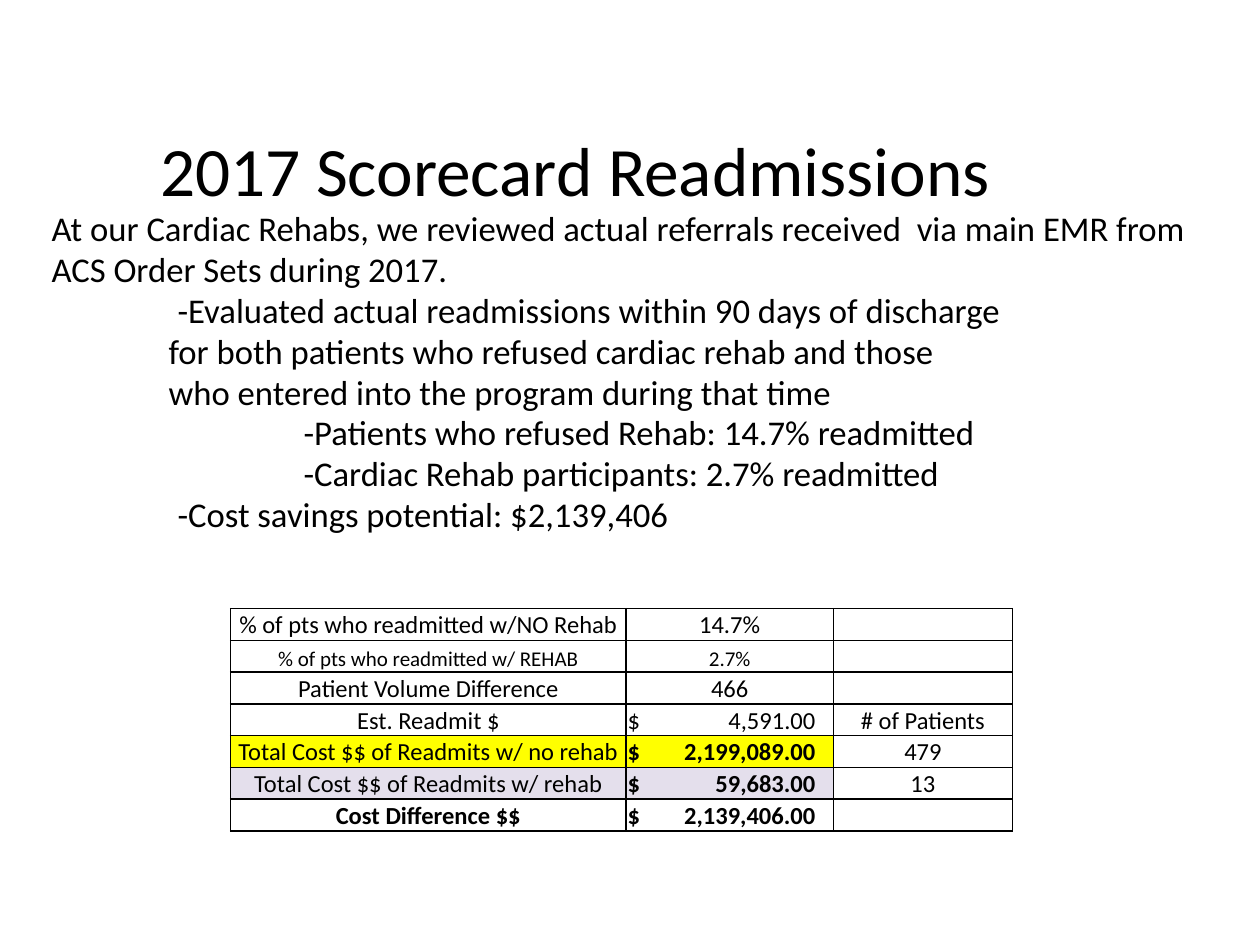
from lxml.etree import SubElement
from pptx import Presentation
from pptx.dml.color import RGBColor
from pptx.enum.text import MSO_ANCHOR, PP_ALIGN
from pptx.oxml.ns import qn
from pptx.util import Cm, Pt

FONT = "Calibri"
COLORS = {"ink": "000000", "no_rehab": "FFFF00", "rehab": "E4DFEC"}

TITLE = "2017 Scorecard Readmissions"
# (text, left indent in cm)
BODY = [
    ("At our Cardiac Rehabs, we reviewed actual referrals received  via main EMR "
     "from ACS Order Sets during 2017.", 0),
    ("-Evaluated actual readmissions within 90 days of discharge", 2.54),
    ("for both patients who refused cardiac rehab and those", 2.36),
    ("who entered into the program during that time", 2.36),
    ("-Patients who refused Rehab: 14.7% readmitted", 5.08),
    ("-Cardiac Rehab participants: 2.7% readmitted", 5.08),
    ("-Cost savings potential: $2,139,406", 2.54),
]

# (cells, text size, fill name, bold columns)
ROWS = [
    (("% of pts who readmitted w/NO Rehab", "14.7%", ""), 14, None, ()),
    (("% of pts who readmitted w/ REHAB", "2.7%", ""), 12, None, ()),
    (("Patient Volume Difference", "466", ""), 14, None, ()),
    (("Est. Readmit $", "$\t4,591.00", "# of Patients"), 14, None, ()),
    (("Total Cost $$ of Readmits w/ no rehab", "$\t2,199,089.00", "479"),
     14, "no_rehab", (1,)),
    (("Total Cost $$ of Readmits w/ rehab", "$\t59,683.00", "13"),
     14, "rehab", (1,)),
    (("Cost Difference $$", "$\t2,139,406.00", ""), 14, None, (0, 1)),
]
COLUMN_WIDTHS = [7.97, 4.18, 3.61]
ROW_HEIGHT = 0.64
AMOUNT_TAB = 3.79


def color(name):
    return RGBColor.from_string(COLORS[name])


def format_runs(paragraph, size, bold=False):
    for span in paragraph.runs:
        span.font.name = FONT
        span.font.size = Pt(size)
        span.font.bold = bold
        span.font.color.rgb = color("ink")


def add_text(slide, left, top, width, height, lines, size, spacing):
    box = slide.shapes.add_textbox(Cm(left), Cm(top), Cm(width), Cm(height))
    frame = box.text_frame
    frame.word_wrap = True
    frame.margin_top = frame.margin_bottom = 0
    for index, (text, indent) in enumerate(lines):
        para = frame.paragraphs[0] if index == 0 else frame.add_paragraph()
        para.text = text
        para.line_spacing = spacing
        para._p.get_or_add_pPr().set("marL", str(Cm(indent)))
        format_runs(para, size)


def add_borders(cell):
    properties = cell._tc.get_or_add_tcPr()
    for side in ("a:lnL", "a:lnR", "a:lnT", "a:lnB"):
        line = SubElement(properties, qn(side), w=str(Pt(1)))
        fill = SubElement(line, qn("a:solidFill"))
        SubElement(fill, qn("a:srgbClr"), val=COLORS["ink"])


def fill_cell(cell, text, size, bold, fill_name):
    cell.margin_left = cell.margin_right = cell.margin_top = Cm(0.03)
    cell.margin_bottom = 0
    cell.vertical_anchor = MSO_ANCHOR.BOTTOM
    add_borders(cell)
    if fill_name:
        cell.fill.solid()
        cell.fill.fore_color.rgb = color(fill_name)
    else:
        cell.fill.background()

    para = cell.text_frame.paragraphs[0]
    if "\t" in text:
        tabs = SubElement(para._p.get_or_add_pPr(), qn("a:tabLst"))
        SubElement(tabs, qn("a:tab"), pos=str(Cm(AMOUNT_TAB)), algn="r")
    else:
        para.alignment = PP_ALIGN.CENTER
    if text:
        para.text = text
        format_runs(para, size, bold)
    else:  # keeps an empty cell from stretching its row
        SubElement(para._p, qn("a:endParaRPr"), sz=str(size * 100))


def add_cost_table(slide):
    frame = slide.shapes.add_table(
        len(ROWS), len(COLUMN_WIDTHS), Cm(4.65), Cm(12.27),
        Cm(sum(COLUMN_WIDTHS)), Cm(ROW_HEIGHT * len(ROWS)))
    table = frame.table
    table.first_row = table.horz_banding = False
    for column, width in zip(table.columns, COLUMN_WIDTHS):
        column.width = Cm(width)
    for r, (texts, size, fill_name, bold_columns) in enumerate(ROWS):
        table.rows[r].height = Cm(ROW_HEIGHT)
        for c, text in enumerate(texts):
            fill_cell(table.cell(r, c), text, size, c in bold_columns,
                      fill_name if c < 2 else None)


def main():
    deck = Presentation()
    deck.slide_width, deck.slide_height = Cm(25.4), Cm(19.05)
    slide = deck.slides.add_slide(deck.slide_layouts[6])
    add_text(slide, 2.98, 2.56, 20, 1.7, [(TITLE, 0)], 39.6, 1)
    add_text(slide, 0.79, 4.22, 23.8, 6.75, BODY, 19.8, 0.98)
    add_cost_table(slide)
    deck.save("out.pptx")


if __name__ == "__main__":
    main()
